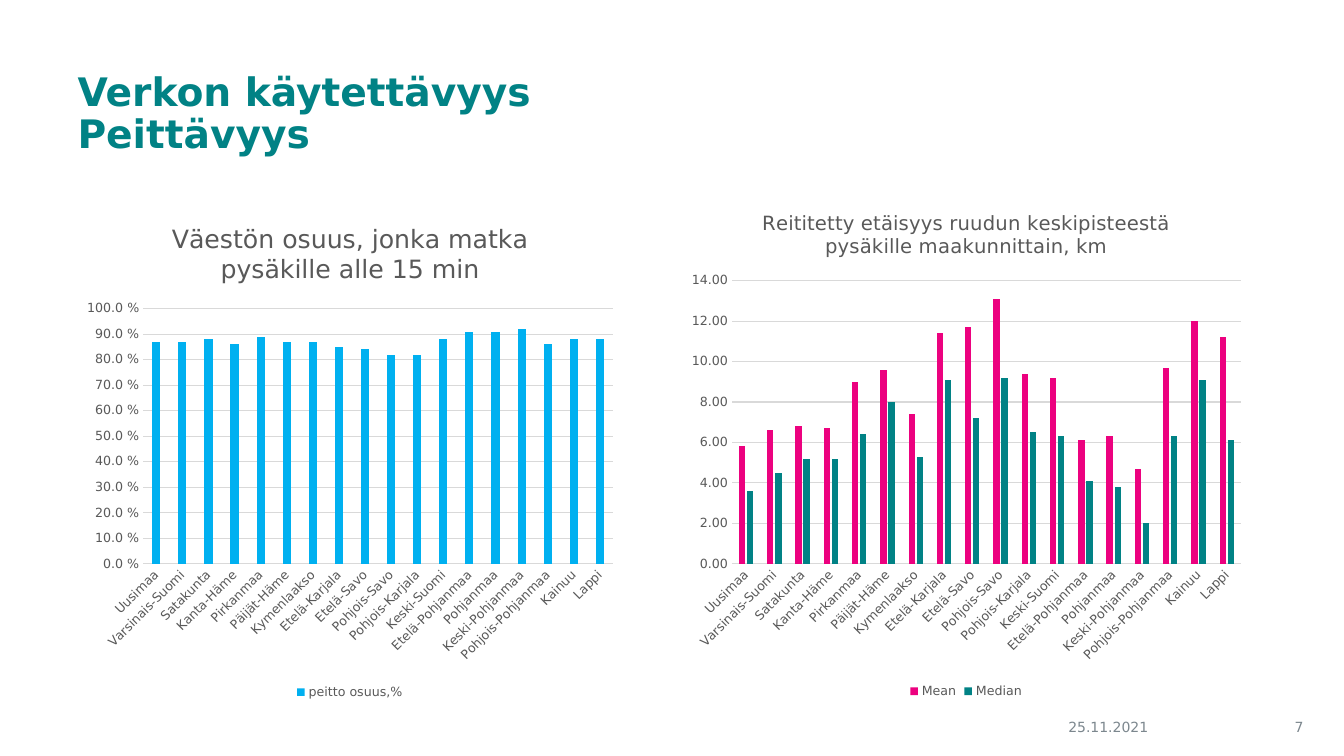
from lxml.etree import SubElement
from pptx import Presentation
from pptx.chart.data import CategoryChartData
from pptx.dml.color import RGBColor
from pptx.enum.chart import XL_CHART_TYPE, XL_LEGEND_POSITION, XL_TICK_MARK
from pptx.enum.text import MSO_ANCHOR, PP_ALIGN
from pptx.oxml import parse_xml
from pptx.oxml.ns import nsdecls, qn
from pptx.util import Pt

FONT = "DejaVu Sans"
TEAL = RGBColor(0x01, 0x82, 0x85)
PINK = RGBColor(0xEC, 0x01, 0x7F)
SKY = RGBColor(0x00, 0xB0, 0xF0)
SLATE = RGBColor(0x7C, 0x87, 0x8E)
GREY = RGBColor(0x59, 0x59, 0x59)
PALE = RGBColor(0xD9, 0xD9, 0xD9)

REGIONS = [
    "Uusimaa", "Varsinais-Suomi", "Satakunta", "Kanta-Häme", "Pirkanmaa",
    "Päijät-Häme", "Kymenlaakso", "Etelä-Karjala", "Etelä-Savo",
    "Pohjois-Savo", "Pohjois-Karjala", "Keski-Suomi", "Etelä-Pohjanmaa",
    "Pohjanmaa", "Keski-Pohjanmaa", "Pohjois-Pohjanmaa", "Kainuu", "Lappi",
]

# Each text: lines, box, alignment, anchor, line spacing, font, colour
TEXTS = [
    (["Verkon käytettävyys", "Peittävyys"], (48.3, 48, 846, 87),
     PP_ALIGN.LEFT, MSO_ANCHOR.TOP, 0.9, dict(size=Pt(28), bold=True), TEAL),
    (["25.11.2021"], (717.8, 509, 147.6, 20),
     PP_ALIGN.CENTER, MSO_ANCHOR.MIDDLE, 1.0, dict(size=Pt(10)), SLATE),
    (["7"], (890, 509, 48.2, 20),
     PP_ALIGN.RIGHT, MSO_ANCHOR.MIDDLE, 1.0, dict(size=Pt(10)), SLATE),
]

# Boxes, title corners and plot areas are in points on the slide
CHARTS = [
    dict(
        title="Väestön osuus, jonka matka pysäkille alle 15 min", title_size=18,
        box=(54, 144.7, 391.7, 357.8), title_at=(119.5, 155.8),
        plot_at=(102.3, 220.5, 335.6, 182.3),
        top=1, step=0.1, number_format="0.0\\ %",
        series=[("peitto osuus,%", SKY, [
            0.87, 0.87, 0.88, 0.86, 0.89, 0.87, 0.87, 0.85, 0.84,
            0.82, 0.82, 0.88, 0.91, 0.91, 0.92, 0.86, 0.88, 0.88])],
    ),
    dict(
        title="Reititetty etäisyys ruudun keskipisteestä pysäkille maakunnittain, km",
        title_size=14,
        box=(486, 135.4, 408.2, 366.5), title_at=(541.9, 147.1),
        plot_at=(522.8, 200.5, 363.7, 202.3),
        top=14, step=2, number_format="0.00",
        series=[
            ("Mean", PINK, [5.8, 6.6, 6.8, 6.7, 9, 9.6, 7.4, 11.4, 11.7, 13.1,
                            9.4, 9.2, 6.1, 6.3, 4.7, 9.7, 12, 11.2]),
            ("Median", TEAL, [3.6, 4.5, 5.2, 5.2, 6.4, 8, 5.3, 9.1, 7.2, 9.2,
                              6.5, 6.3, 4.1, 3.8, 2, 6.3, 9.1, 6.1]),
        ],
    ),
]


def set_format(target, values):
    for name, value in values.items():
        setattr(target, name, value)


def set_font(font, color, **values):
    set_format(font, dict(name=FONT, **values))
    font.color.rgb = color


def set_line(line, color):
    line.color.rgb = color
    line.width = Pt(0.75)


def add_text(page, lines, box, align, anchor, spacing, font, color):
    frame = page.shapes.add_textbox(*map(Pt, box)).text_frame
    set_format(frame, dict(word_wrap=True, vertical_anchor=anchor))
    para = frame.paragraphs[0]
    set_format(para, dict(alignment=align, line_spacing=spacing))
    for index, line in enumerate(lines):
        if index:
            para.add_line_break()
        span = para.add_run()
        span.text = line
        set_font(span.font, color, **font)


def place(parent, box, position, inner=False):
    """Place a chart title or plot area, as fractions of the chart box."""
    left, top, width, height = box
    x, y, *size = position
    offsets = (x - left, y - top, *size)
    fractions = [part / whole
                 for part, whole in zip(offsets, (width, height) * 2)]
    layout = parent.find(qn("c:layout"))
    if layout is None:
        layout = parse_xml(f"<c:layout {nsdecls('c')}/>")
        parent.insert(0, layout)
    manual = SubElement(layout, qn("c:manualLayout"))
    settings = [("layoutTarget", "inner")] if inner else []
    settings += [("xMode", "edge"), ("yMode", "edge")]
    settings += zip("xywh", fractions)
    for name, value in settings:
        SubElement(manual, qn(f"c:{name}")).set("val", str(value))


def add_columns(page, item):
    data = CategoryChartData()
    data.categories = REGIONS
    for name, _, values in item["series"]:
        data.add_series(name, values)
    chart = page.shapes.add_chart(
        XL_CHART_TYPE.COLUMN_CLUSTERED, *map(Pt, item["box"]), data).chart
    set_font(chart.font, GREY, size=Pt(10))

    chart.has_title = True
    title = chart.chart_title.text_frame
    title.text = item["title"]
    set_font(title.paragraphs[0].runs[0].font, GREY,
             size=Pt(item["title_size"]), bold=False)
    chart.has_legend = True
    set_format(chart.legend, dict(position=XL_LEGEND_POSITION.BOTTOM,
                                  include_in_layout=False))
    set_font(chart.legend.font, GREY, size=Pt(9))

    plot = chart.plots[0]
    set_format(plot, dict(gap_width=219, overlap=-27, vary_by_categories=False))
    for series, (_, color, _) in zip(plot.series, item["series"]):
        series.format.fill.solid()
        series.format.fill.fore_color.rgb = color

    regions, scale = chart.category_axis, chart.value_axis
    for axis in (regions, scale):
        set_format(axis, dict(major_tick_mark=XL_TICK_MARK.NONE,
                              minor_tick_mark=XL_TICK_MARK.NONE))
        set_font(axis.tick_labels.font, GREY, size=Pt(9))
    set_line(regions.format.line, PALE)
    set_format(scale, dict(minimum_scale=0, maximum_scale=item["top"],
                           major_unit=item["step"], has_major_gridlines=True))
    set_line(scale.major_gridlines.format.line, PALE)
    scale.format.line.fill.background()
    set_format(scale.tick_labels, dict(number_format=item["number_format"],
                                       number_format_is_linked=False))

    root = chart.element
    root.xpath(".//c:catAx/c:txPr/a:bodyPr")[0].set("rot", "-2700000")
    place(root.xpath("c:chart/c:title")[0], item["box"], item["title_at"])
    place(root.xpath("c:chart/c:plotArea")[0], item["box"], item["plot_at"],
          inner=True)


def main():
    deck = Presentation()
    set_format(deck, dict(slide_width=Pt(960), slide_height=Pt(540)))
    page = deck.slides.add_slide(deck.slide_layouts[6])
    for text in TEXTS:
        add_text(page, *text)
    for item in CHARTS:
        add_columns(page, item)
    deck.save("out.pptx")


if __name__ == "__main__":
    main()
